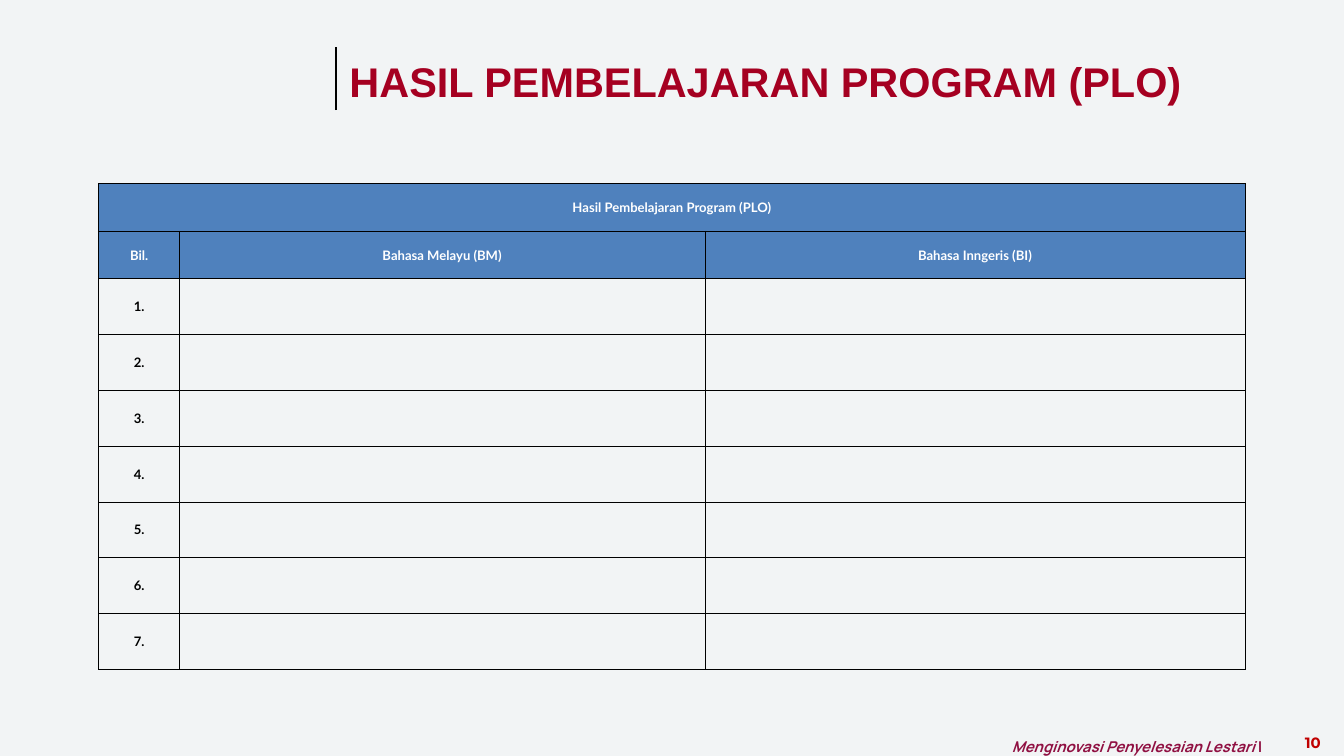
from lxml.etree import SubElement
from pptx import Presentation
from pptx.dml.color import RGBColor
from pptx.enum.shapes import MSO_CONNECTOR as Connector
from pptx.enum.text import MSO_ANCHOR as Anchor, MSO_AUTO_SIZE as AutoSize, PP_ALIGN as Align
from pptx.oxml.ns import qn
from pptx.util import Inches, Pt

COLORS = {
    "background": "F2F4F5",
    "title": "A50021",
    "motto": "901042",
    "page": "C00000",
    "header": "4F81BD",
    "white": "FFFFFF",
    "black": "000000",
}
COLUMN_WIDTHS = [1.2, 7.82, 8.04]
HEADER_HEIGHT, ROW_HEIGHT = 0.71, 0.83
HEADER_ROWS, OUTCOMES = 2, 7


def color(name):
    return RGBColor.from_string(COLORS[name])


def write(paragraph, text, *, size, font, fill, italic=None, align=None, spacing=None):
    """Add one bold run to the paragraph."""
    if align is not None:
        paragraph.alignment = align
    if spacing is not None:
        paragraph.line_spacing = spacing
    run = paragraph.add_run()
    run.text = text
    run.font.size = Pt(size)
    run.font.name = font
    run.font.bold = True
    run.font.italic = italic
    run.font.color.rgb = color(fill)


def add_text_box(slide, left, top, width, height, inset=None):
    box = slide.shapes.add_textbox(Inches(left), Inches(top), Inches(width), Inches(height))
    frame = box.text_frame
    frame.word_wrap = True
    if inset is not None:
        frame.margin_left = frame.margin_right = Inches(inset)
        frame.margin_top = frame.margin_bottom = Inches(inset)
    return frame.paragraphs[0]


def add_title(slide, text):
    title = slide.shapes.title
    title.left, title.top = Inches(5.13), Inches(0.69)
    title.width, title.height = Inches(12.78), Inches(1.25)
    frame = title.text_frame
    frame.auto_size = AutoSize.NONE
    frame.vertical_anchor = Anchor.TOP
    frame.margin_left, frame.margin_top = Inches(0.07), Inches(0.14)
    write(frame.paragraphs[0], text, size=44.4, font="Arial", fill="title", align=Align.LEFT)


def add_title_rule(slide):
    rule = slide.shapes.add_connector(
        Connector.STRAIGHT, Inches(5), Inches(1.64), Inches(5), Inches(0.7))
    rule.line.color.rgb = color("black")
    rule.line.width = Pt(3)
    SubElement(rule._element.spPr, qn("a:effectLst"))


def add_borders(cell):
    properties = cell._tc.get_or_add_tcPr()
    for side in ("a:lnL", "a:lnR", "a:lnT", "a:lnB"):
        border = SubElement(properties, qn(side), w=str(Pt(1)))
        solid = SubElement(border, qn("a:solidFill"))
        SubElement(solid, qn("a:srgbClr"), val=COLORS["black"])


def fill_cell(cell, text, is_header):
    add_borders(cell)
    cell.vertical_anchor = Anchor.MIDDLE
    if is_header:
        cell.fill.solid()
        cell.fill.fore_color.rgb = color("header")
    else:
        cell.fill.background()
    if text:
        write(cell.text_frame.paragraphs[0], text, size=14, font="Lato",
              fill="white" if is_header else "black", align=Align.CENTER)


def add_outcome_table(slide):
    rows = [
        ["Hasil Pembelajaran Program (PLO)", "", ""],
        ["Bil.", "Bahasa Melayu (BM)", "Bahasa Inngeris (BI)"],
    ] + [[f"{number}.", "", ""] for number in range(1, OUTCOMES + 1)]
    heights = [HEADER_HEIGHT] * HEADER_ROWS + [ROW_HEIGHT] * OUTCOMES

    table = slide.shapes.add_table(
        len(rows), len(COLUMN_WIDTHS), Inches(1.47), Inches(2.73),
        Inches(sum(COLUMN_WIDTHS)), Inches(sum(heights))).table
    for column, width in zip(table.columns, COLUMN_WIDTHS):
        column.width = Inches(width)
    for r, (texts, height) in enumerate(zip(rows, heights)):
        table.rows[r].height = Inches(height)
        for c, text in enumerate(texts):
            fill_cell(table.cell(r, c), text, r < HEADER_ROWS)
    table.cell(0, 0).merge(table.cell(0, len(COLUMN_WIDTHS) - 1))


def add_footer(slide):
    motto = add_text_box(slide, 15.06, 10.87, 4.2, 0.38, inset=0)
    style = dict(size=16, font="Manrope", fill="motto", spacing=1.4)
    write(motto, "Menginovasi Penyelesaian Lestari ", italic=True, **style)
    write(motto, "|", italic=False, **style)

    page = add_text_box(slide, 19.07, 10.87, 0.93, 0.37)
    write(page, "10", size=16, font="Montserrat", fill="page", align=Align.CENTER)


def main():
    deck = Presentation()
    deck.slide_width, deck.slide_height = Inches(20), Inches(11.25)
    slide = deck.slides.add_slide(deck.slide_layouts[5])  # Title Only
    slide.background.fill.solid()
    slide.background.fill.fore_color.rgb = color("background")

    add_footer(slide)
    add_title_rule(slide)
    add_title(slide, "HASIL PEMBELAJARAN PROGRAM (PLO)")
    add_outcome_table(slide)
    deck.save("out.pptx")


if __name__ == "__main__":
    main()
